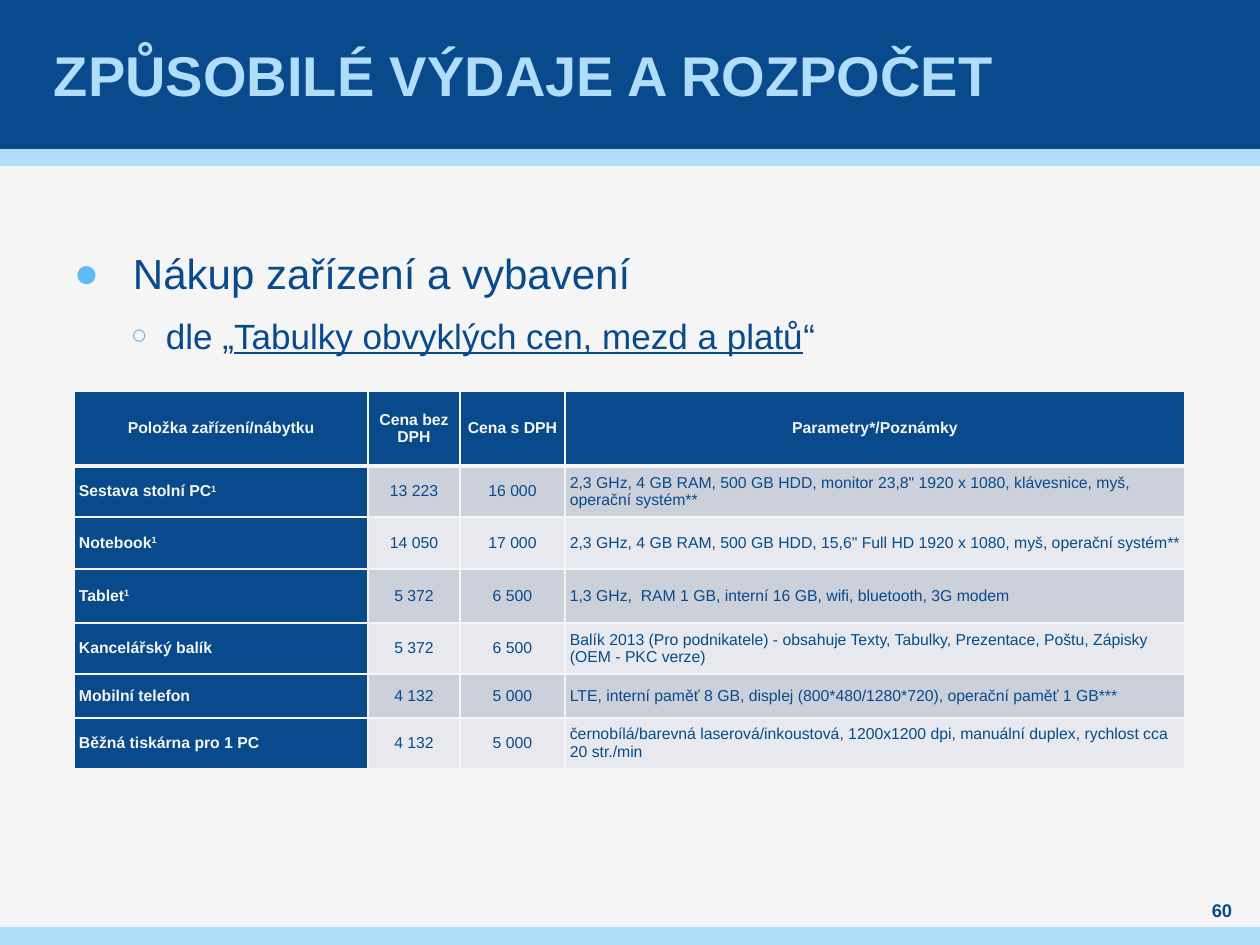
from lxml.etree import SubElement
from pptx import Presentation
from pptx.dml.color import RGBColor
from pptx.enum.shapes import MSO_SHAPE
from pptx.enum.text import MSO_ANCHOR, PP_ALIGN
from pptx.oxml.ns import qn
from pptx.util import Pt

PX = 914400 / 126
WIDTH, HEIGHT = 1260, 945
FONT = "Arial"
NAVY = RGBColor(0x08, 0x4A, 0x8B)
SKY = RGBColor(0xAF, 0xDD, 0xFA)
BULLET = RGBColor(0x5F, 0xBB, 0xF5)
PAPER = RGBColor(0xF5, 0xF5, 0xF5)
BAND_DARK = RGBColor(0xCC, 0xD0, 0xDA)
BAND_LIGHT = RGBColor(0xE7, 0xE9, 0xEE)

COLUMN_WIDTHS = (294, 92, 105, 620)
ROW_HEIGHTS = (75, 51, 52, 54, 51, 44, 51)
HEADERS = ("Položka zařízení/nábytku", "Cena bez DPH", "Cena s DPH", "Parametry*/Poznámky")
ITEMS = (
    ("Sestava stolní PC", "1", "13 223", "16 000",
     '2,3 GHz, 4 GB RAM, 500 GB HDD, monitor 23,8" 1920 x 1080, klávesnice, myš, operační systém**'),
    ("Notebook", "1", "14 050", "17 000",
     '2,3 GHz, 4 GB RAM, 500 GB HDD, 15,6" Full HD 1920 x 1080, myš, operační systém**'),
    ("Tablet", "1", "5 372", "6 500",
     "1,3 GHz,  RAM 1 GB, interní 16 GB, wifi, bluetooth, 3G modem"),
    ("Kancelářský balík", "", "5 372", "6 500",
     "Balík 2013 (Pro podnikatele) - obsahuje Texty, Tabulky, Prezentace, Poštu, Zápisky (OEM - PKC verze)"),
    ("Mobilní telefon", "", "4 132", "5 000",
     "LTE, interní paměť 8 GB, displej (800*480/1280*720), operační paměť 1 GB***"),
    ("Běžná tiskárna pro 1 PC", "", "4 132", "5 000",
     "černobílá/barevná laserová/inkoustová, 1200x1200 dpi, manuální duplex, rychlost cca 20 str./min"),
)


def px(*lengths):
    return [round(length * PX) for length in lengths]


def add_text(paragraph, text, size, color=NAVY, bold=False, underline=False,
             superscript=False, align=None):
    if align is not None:
        paragraph.alignment = align
    run = paragraph.add_run()
    run.text = text
    font = run.font
    font.name, font.size, font.bold, font.underline = FONT, Pt(size), bold, underline
    font.color.rgb = color
    if superscript:
        run._r.get_or_add_rPr().set("baseline", "30000")


def add_bar(slide, left, top, width, height, color):
    shape = slide.shapes.add_shape(MSO_SHAPE.RECTANGLE, *px(left, top, width, height))
    shape.shadow.inherit = False
    shape.fill.solid()
    shape.fill.fore_color.rgb = color
    shape.line.fill.background()


def add_frame(slide, left, top, width, height, anchor=MSO_ANCHOR.MIDDLE, side=0):
    frame = slide.shapes.add_textbox(*px(left, top, width, height)).text_frame
    frame.word_wrap = True
    frame.vertical_anchor = anchor
    frame.margin_left, frame.margin_right = px(side, side)
    frame.margin_top = frame.margin_bottom = 0
    return frame


def add_bullet(paragraph, character, left, hanging, line, space, scale=100):
    paragraph.line_spacing = Pt(line)
    paragraph.space_before = paragraph.space_after = Pt(space)
    properties = paragraph._p.get_or_add_pPr()
    margin, indent = px(left, -hanging)
    properties.set("marL", str(margin))
    properties.set("indent", str(indent))
    color = SubElement(properties, qn("a:buClr"))
    SubElement(color, qn("a:srgbClr"), val=str(BULLET))
    SubElement(properties, qn("a:buSzPct"), val=str(scale * 1000))
    SubElement(properties, qn("a:buFont"), typeface=FONT)
    SubElement(properties, qn("a:buChar"), char=character)


def add_header(slide, left, top, width, height):
    add_bar(slide, left, top + height, width, 17, SKY)
    add_bar(slide, left, top, width, height, NAVY)
    title = add_frame(slide, left + 49, top, width - 100, height, side=5)
    add_text(title.paragraphs[0], "ZPŮSOBILÉ VÝDAJE A ROZPOČET", 32, SKY, bold=True)


def add_footer(slide, left, top, width, height):
    add_bar(slide, left, top, width, height, SKY)
    number = add_frame(slide, left + width - 70, top - 29, 64, 25)
    add_text(number.paragraphs[0], "60", 10.5, bold=True, align=PP_ALIGN.CENTER)


def add_body(slide, left, top, width, height):
    frame = add_frame(slide, left, top, width, height, anchor=MSO_ANCHOR.TOP)
    topic = frame.paragraphs[0]
    add_bullet(topic, "●", 59, 59, line=28.8, space=6)
    add_text(topic, "Nákup zařízení a vybavení", 24)
    detail = frame.add_paragraph()
    detail.level = 1
    add_bullet(detail, "○", 92, 35, line=24, space=3, scale=80)
    add_text(detail, "dle „", 20)
    add_text(detail, "Tabulky obvyklých cen, mezd a platů", 20, underline=True)
    add_text(detail, "“", 20)


def set_borders(cell, **widths):
    properties = cell._tc.get_or_add_tcPr()
    for position, (side, width) in enumerate(widths.items()):
        line = SubElement(properties, qn(f"a:ln{side}"), w=str(Pt(width)))
        fill = SubElement(line, qn("a:solidFill"))
        SubElement(fill, qn("a:srgbClr"), val=str(PAPER))
        properties.insert(position, line)


def style_cell(cell, fill, top=1, bottom=1):
    cell.fill.solid()
    cell.fill.fore_color.rgb = fill
    cell.vertical_anchor = MSO_ANCHOR.MIDDLE
    cell.margin_left, cell.margin_right = px(5, 5)
    cell.margin_top = cell.margin_bottom = 0
    set_borders(cell, L=1, R=1, T=top, B=bottom)
    return cell.text_frame.paragraphs[0]


def add_price_table(slide, left, top):
    box = px(left, top, sum(COLUMN_WIDTHS), sum(ROW_HEIGHTS))
    table = slide.shapes.add_table(len(ROW_HEIGHTS), len(COLUMN_WIDTHS), *box).table
    table.horz_banding = False
    for column, width in zip(table.columns, px(*COLUMN_WIDTHS)):
        column.width = width
    for row, height in zip(table.rows, px(*ROW_HEIGHTS)):
        row.height = height
    for column, header in enumerate(HEADERS):
        paragraph = style_cell(table.cell(0, column), NAVY, bottom=3)
        add_text(paragraph, header, 9, PAPER, bold=True, align=PP_ALIGN.CENTER)
    for row, (item, note, *values) in enumerate(ITEMS, start=1):
        paragraph = style_cell(table.cell(row, 0), NAVY, top=3 if row == 1 else 1)
        add_text(paragraph, item, 9, PAPER, bold=True)
        if note:
            add_text(paragraph, note, 9, PAPER, bold=True, superscript=True)
        band = BAND_DARK if row % 2 else BAND_LIGHT
        for column, value in enumerate(values, start=1):
            paragraph = style_cell(table.cell(row, column), band, top=3 if row == 1 else 1)
            add_text(paragraph, value, 9, align=PP_ALIGN.CENTER if column < 3 else PP_ALIGN.LEFT)


def main():
    presentation = Presentation()
    presentation.slide_width, presentation.slide_height = px(WIDTH, HEIGHT)
    slide = presentation.slides.add_slide(presentation.slide_layouts[6])
    slide.background.fill.solid()
    slide.background.fill.fore_color.rgb = PAPER
    add_header(slide, 0, 0, WIDTH, 149)
    add_body(slide, 74, 248, 1111, 595)
    add_price_table(slide, 74, 391)
    add_footer(slide, 0, 927, WIDTH, 18)
    presentation.save("out.pptx")


if __name__ == "__main__":
    main()
